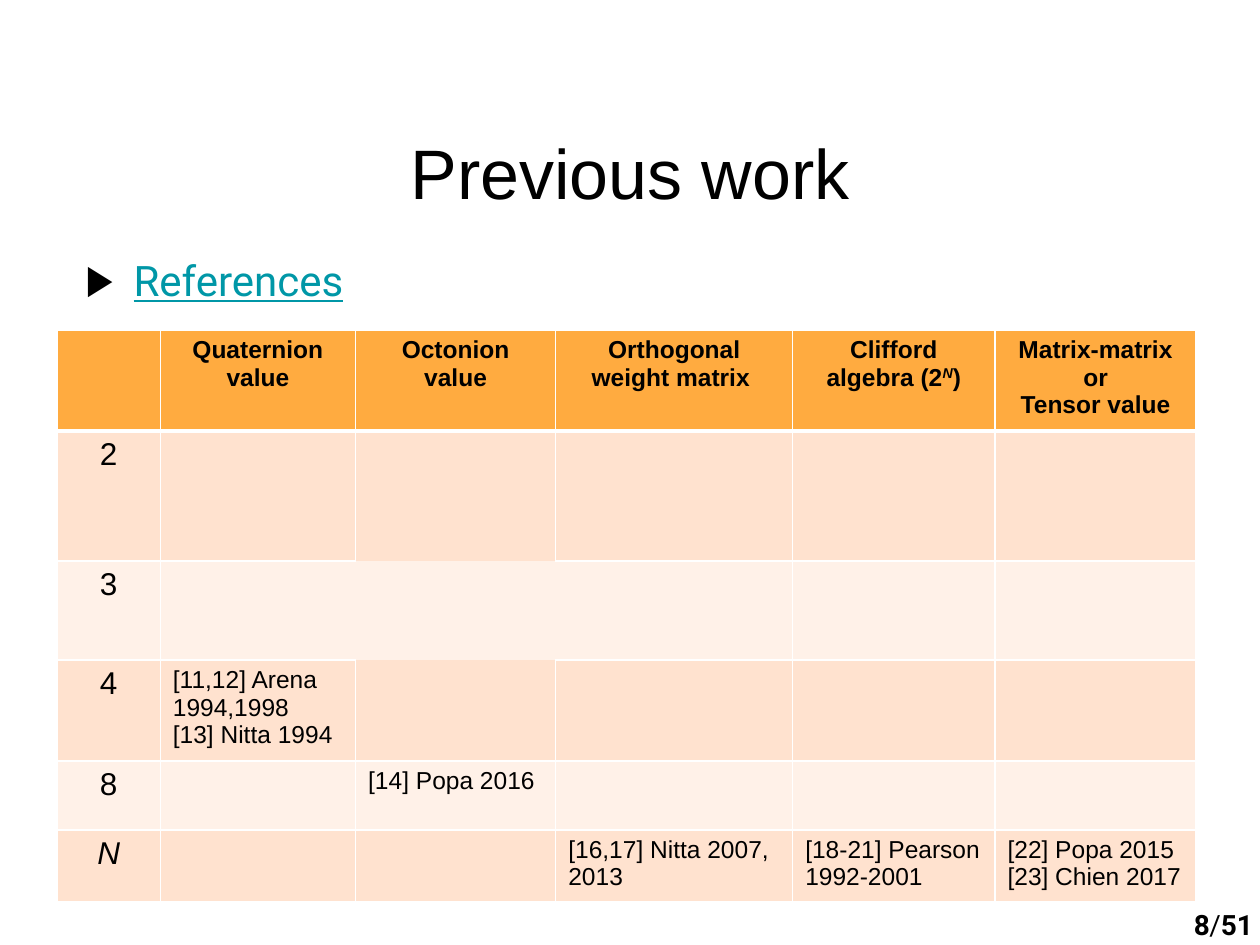
from lxml import etree
from pptx import Presentation
from pptx.dml.color import RGBColor
from pptx.enum.text import MSO_ANCHOR, PP_ALIGN
from pptx.oxml.ns import qn
from pptx.util import Pt

LEFT, CENTER, RIGHT = PP_ALIGN.LEFT, PP_ALIGN.CENTER, PP_ALIGN.RIGHT
MIDDLE = MSO_ANCHOR.MIDDLE
COLORS = {"text": "000000", "link": "0097A7", "header": "FFAB40",
          "dark_band": "FFE2CF", "light_band": "FFF1E8", "border": "FFFFFF"}

prs = Presentation()
prs.slide_width, prs.slide_height = Pt(720), Pt(540)
slide = prs.slides.add_slide(prs.slide_layouts[6])


def add_text(frame, text, size=14, font="Arial", color="text", align=LEFT,
             bold=False, italic=False, underline=False, superscript=False,
             same_line=False):
    """Write each line as a paragraph, or continue the last paragraph."""
    for number, line in enumerate(text.split("\n")):
        paragraph = frame.paragraphs[-1]
        if number and not same_line:
            paragraph = frame.add_paragraph()
        paragraph.alignment = align
        run = paragraph.add_run()
        run.text = line
        run.font.size, run.font.name = Pt(size), font
        run.font.bold, run.font.italic = bold, italic
        run.font.underline = underline
        run.font.color.rgb = RGBColor.from_string(COLORS[color])
        if superscript:
            run._r.get_or_add_rPr().set("baseline", "30000")


def add_box(left, top, width, height, margin_top=3.6):
    frame = slide.shapes.add_textbox(Pt(left), Pt(top), Pt(width), Pt(height)).text_frame
    frame.word_wrap = True
    frame.margin_top = Pt(margin_top)
    return frame


# Page total
page_total = add_box(684, 514.8, 45.4, 26.6)
page_total.word_wrap = False
add_text(page_total, "/", size=16, font="Roboto")
add_text(page_total, "51", size=16, font="Roboto", bold=True, same_line=True)

# Title
title = add_box(0, 67, 720, 55.4, margin_top=7.2)
add_text(title, "Previous work", size=40, align=CENTER)

# Bulleted references line
references = add_box(41.8, 140.4, 630, 338.4, margin_top=5)
bullet_props = references.paragraphs[0]._p.get_or_add_pPr()
bullet_props.set("marL", str(Pt(27.4)))
bullet_props.set("indent", str(-Pt(27.4)))
bullet_color = etree.SubElement(bullet_props, qn("a:buClr"))
etree.SubElement(bullet_color, qn("a:srgbClr"), val=COLORS["text"])
etree.SubElement(bullet_props, qn("a:buFont"), typeface="Arial")
etree.SubElement(bullet_props, qn("a:buChar"), char="▶")
add_text(references, "References", size=24, font="Roboto", color="link", underline=True)

# Table of earlier papers by dimension
headers = ["", "Quaternion value", "Octonion value", "Orthogonal weight matrix ",
           "Clifford algebra (2", "Matrix-matrix\nor\nTensor value"]
dimensions = ["2", "3", "4", "8", "N"]
papers = {(3, 1): "[11,12] Arena 1994,1998\n[13] Nitta 1994",
          (4, 2): "[14] Popa 2016",
          (5, 3): "[16,17] Nitta 2007, 2013",
          (5, 4): "[18-21] Pearson 1992-2001",
          (5, 5): "[22] Popa 2015\n[23] Chien 2017"}
column_widths = [59, 111.6, 114.4, 135.4, 115.6, 115]
row_heights = [57.4, 74.3, 56.6, 57.4, 39.4, 40.6]
# The cell for dimension 3 and octonions has no borders on any side
open_edges = {(2, 2): "LRTB", (1, 2): "B", (3, 2): "T", (2, 1): "R", (2, 3): "L"}

table = slide.shapes.add_table(len(row_heights), len(column_widths), Pt(32.6), Pt(188.6),
                               Pt(sum(column_widths)), Pt(sum(row_heights))).table
for column, width in zip(table.columns, column_widths):
    column.width = Pt(width)
for row, height in zip(table.rows, row_heights):
    row.height = Pt(height)

for r in range(len(row_heights)):
    for c in range(len(column_widths)):
        cell = table.cell(r, c)
        # Borders, with a thick rule between header and body
        for side in "LRTB":
            thick = (r, side) in ((0, "B"), (1, "T"))
            border = etree.SubElement(cell._tc.get_or_add_tcPr(), qn("a:ln" + side),
                                      w=str(Pt(3 if thick else 1)))
            if side in open_edges.get((r, c), ""):
                etree.SubElement(border, qn("a:noFill"))
            else:
                line_fill = etree.SubElement(border, qn("a:solidFill"))
                etree.SubElement(line_fill, qn("a:srgbClr"), val=COLORS["border"])
        # Banded fill
        band = "header" if r == 0 else "dark_band" if r % 2 else "light_band"
        cell.fill.solid()
        cell.fill.fore_color.rgb = RGBColor.from_string(COLORS[band])
        # Wording
        if r == 0 and headers[c]:
            add_text(cell.text_frame, headers[c], align=CENTER, bold=True)
        elif r and c == 0:
            dimension = dimensions[r - 1]
            add_text(cell.text_frame, dimension, size=18, align=CENTER,
                     italic=dimension == "N")
        elif (r, c) in papers:
            add_text(cell.text_frame, papers[r, c])

# Exponent in the Clifford header
clifford = table.cell(0, 4).text_frame
add_text(clifford, "N", align=CENTER, bold=True, italic=True, superscript=True, same_line=True)
add_text(clifford, ")", align=CENTER, bold=True, same_line=True)

# Page number
page_number = add_box(656.6, 507.6, 41.8, 41, margin_top=7.2)
page_number.margin_bottom = Pt(7.2)
page_number.vertical_anchor = MIDDLE
add_text(page_number, "8", size=16, font="Roboto", align=RIGHT, bold=True)

prs.save("out.pptx")
